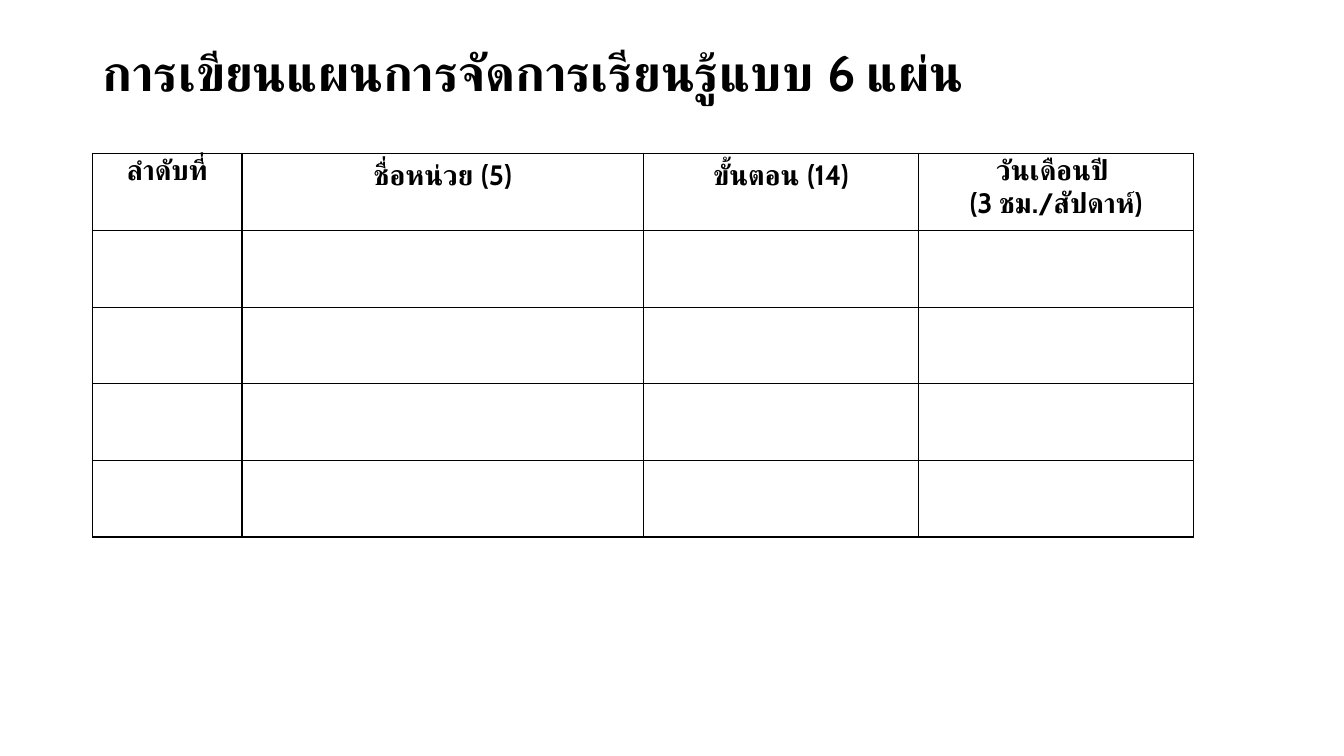
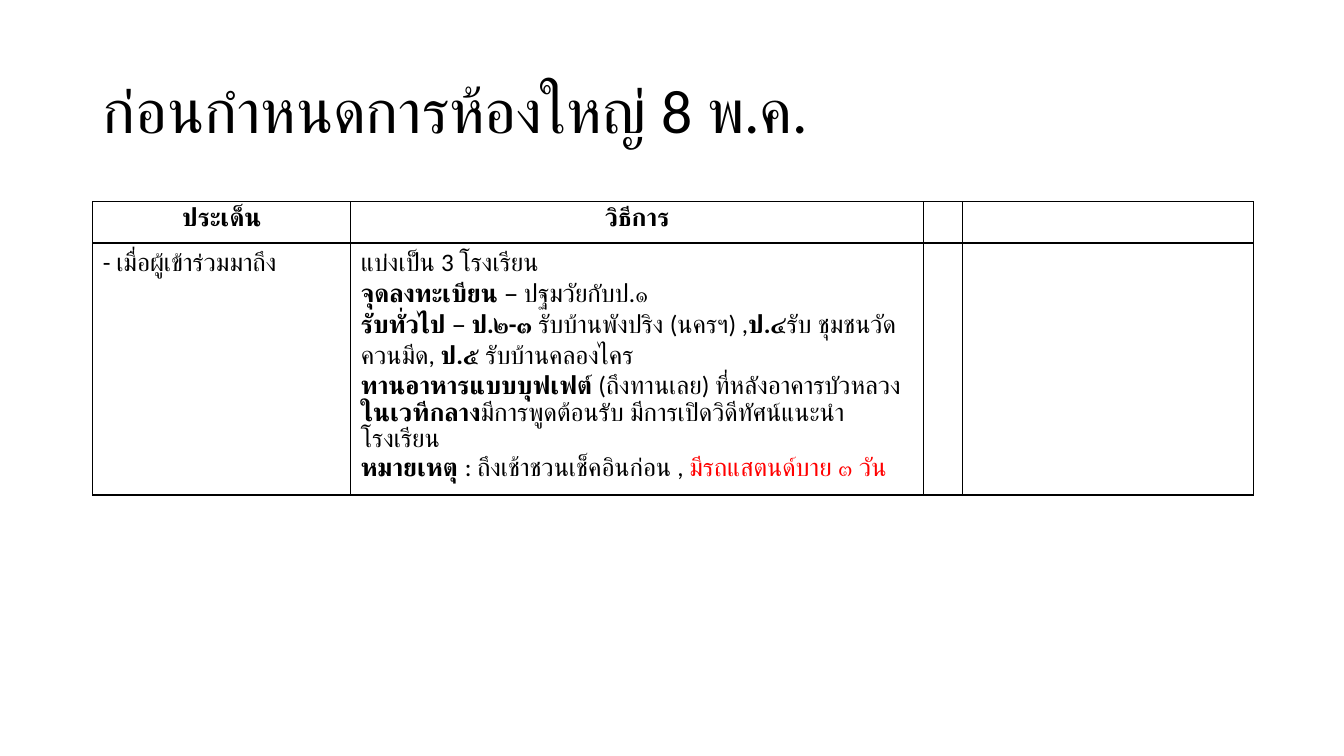
from lxml.etree import SubElement
from pptx import Presentation
from pptx.dml.color import RGBColor
from pptx.enum.text import MSO_ANCHOR, PP_ALIGN
from pptx.oxml.ns import qn
from pptx.util import Inches, Pt

BLACK = RGBColor(0x00, 0x00, 0x00)
RED = RGBColor(0xFF, 0x00, 0x00)
LEFT = 0.92
TITLE_TOP, TITLE_WIDTH = 0.4, 11.5
BORDER_WIDTH = Pt(1)

# A cell is a list of paragraphs, a paragraph a list of runs: (text, bold[, colour]).
LESSON_PLAN = {
    "title": "การเขียนแผนการจัดการเรียนรู้แบบ 6 แผ่น",
    "title_height": 0.69, "title_size": 36, "title_bold": True,
    "font": "Cabin", "size": 20,
    "top": 1.52, "columns": [1.48, 3.98, 2.73, 2.73], "rows": [0.76] * 5,
    "header": [
        [[("ลำดับที่", True)]],
        [[("ชื่อหน่วย (5)", True)]],
        [[("ขั้นตอน (14)", True)]],
        [[("วันเดือนปี ", True)], [("(3 ชม./สัปดาห์)", True)]],
    ],
    "body": [],
}
MEETING_PREPARATION = {
    "title": "ก่อนกำหนดการห้องใหญ่ 8 พ.ค.",
    "title_height": 1.45, "title_size": 44, "title_bold": False,
    "font": "Calibri", "size": 18,
    "top": 2, "columns": [2.56, 5.68, 0.39, 2.88], "rows": [0.41, 2.43],
    "header": [[[("ประเด็น", True)]], [[("วิธีการ", True)]]],
    "body": [[
        [[("- เมื่อผู้เข้าร่วมมาถึง", False)]],
        [
            [("แบ่งเป็น 3 โรงเรียน", False)],
            [("จุดลงทะเบียน ", True), ("– ปฐมวัยกับป.๑", False)],
            [("รับทั่วไป ", True), ("– ", False), ("ป.๒-๓", True),
             (" รับบ้านพังปริง (นครฯ) ,", False), ("ป.๔", True),
             ("รับ ชุมชนวัดควนมีด, ", False), ("ป.๕", True),
             (" รับบ้านคลองไคร", False)],
            [("ทานอาหารแบบบุฟเฟต์", True),
             (" (ถึงทานเลย) ที่หลังอาคารบัวหลวง", False)],
            [("ในเวทีกลาง", True),
             ("มีการพูดต้อนรับ มีการเปิดวิดีทัศน์แนะนำโรงเรียน", False)],
            [("หมายเหตุ ", True), (": ถึงเช้าชวนเช็คอินก่อน , ", False),
             ("มีรถแสตนด์บาย ๓ วัน", False, RED)],
        ],
    ]],
}


def add_run(paragraph, font_name, size, text, bold, color=BLACK):
    run = paragraph.add_run()
    run.text = text
    run.font.name = font_name
    run.font.size = Pt(size)
    run.font.bold = bold
    run.font.color.rgb = color


def add_title(slide, content):
    box = slide.shapes.add_textbox(Inches(LEFT), Inches(TITLE_TOP),
                                   Inches(TITLE_WIDTH), Inches(content["title_height"]))
    frame = box.text_frame
    frame.word_wrap = True
    frame.vertical_anchor = MSO_ANCHOR.MIDDLE
    paragraph = frame.paragraphs[0]
    paragraph.line_spacing = 0.9
    add_run(paragraph, content["font"], content["title_size"],
            content["title"], content["title_bold"])


def style_cell(cell):
    """Give the cell black borders on all sides and no fill."""
    properties = cell._tc.get_or_add_tcPr()
    for side in ("a:lnL", "a:lnR", "a:lnT", "a:lnB"):
        line = SubElement(properties, qn(side), w=str(BORDER_WIDTH))
        fill = SubElement(line, qn("a:solidFill"))
        SubElement(fill, qn("a:srgbClr"), val=str(BLACK))
    cell.fill.background()


def fill_cell(cell, paragraphs, alignment, content):
    frame = cell.text_frame
    for index, runs in enumerate(paragraphs):
        paragraph = frame.add_paragraph() if index else frame.paragraphs[0]
        paragraph.alignment = alignment
        for run in runs:
            add_run(paragraph, content["font"], content["size"], *run)


def add_grid(slide, content):
    widths, heights = content["columns"], content["rows"]
    frame = slide.shapes.add_table(len(heights), len(widths), Inches(LEFT),
                                   Inches(content["top"]), Inches(sum(widths)),
                                   Inches(sum(heights)))
    table = frame.table
    table.first_row = table.horz_banding = False
    for column, width in zip(table.columns, widths):
        column.width = Inches(width)
    for row, height in zip(table.rows, heights):
        row.height = Inches(height)
    for cell in table.iter_cells():
        style_cell(cell)
    for row_index, cells in enumerate([content["header"], *content["body"]]):
        alignment = PP_ALIGN.LEFT if row_index else PP_ALIGN.CENTER
        for column_index, paragraphs in enumerate(cells):
            fill_cell(table.cell(row_index, column_index), paragraphs, alignment, content)


def main():
    presentation = Presentation()
    presentation.slide_width = Inches(13.33)
    presentation.slide_height = Inches(7.5)
    for content in (LESSON_PLAN, MEETING_PREPARATION):
        slide = presentation.slides.add_slide(presentation.slide_layouts[6])
        add_title(slide, content)
        add_grid(slide, content)
    presentation.save("out.pptx")


if __name__ == "__main__":
    main()
